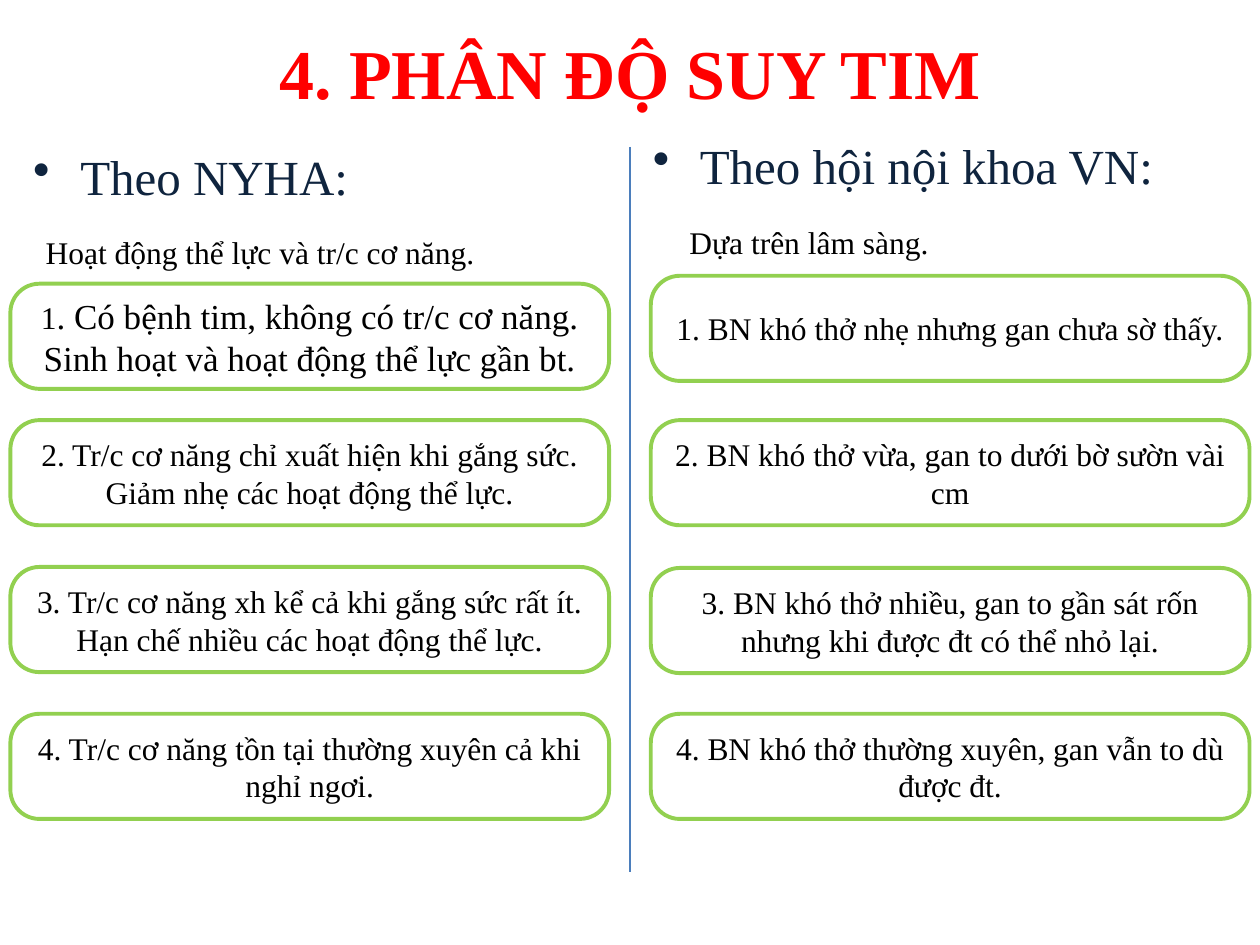
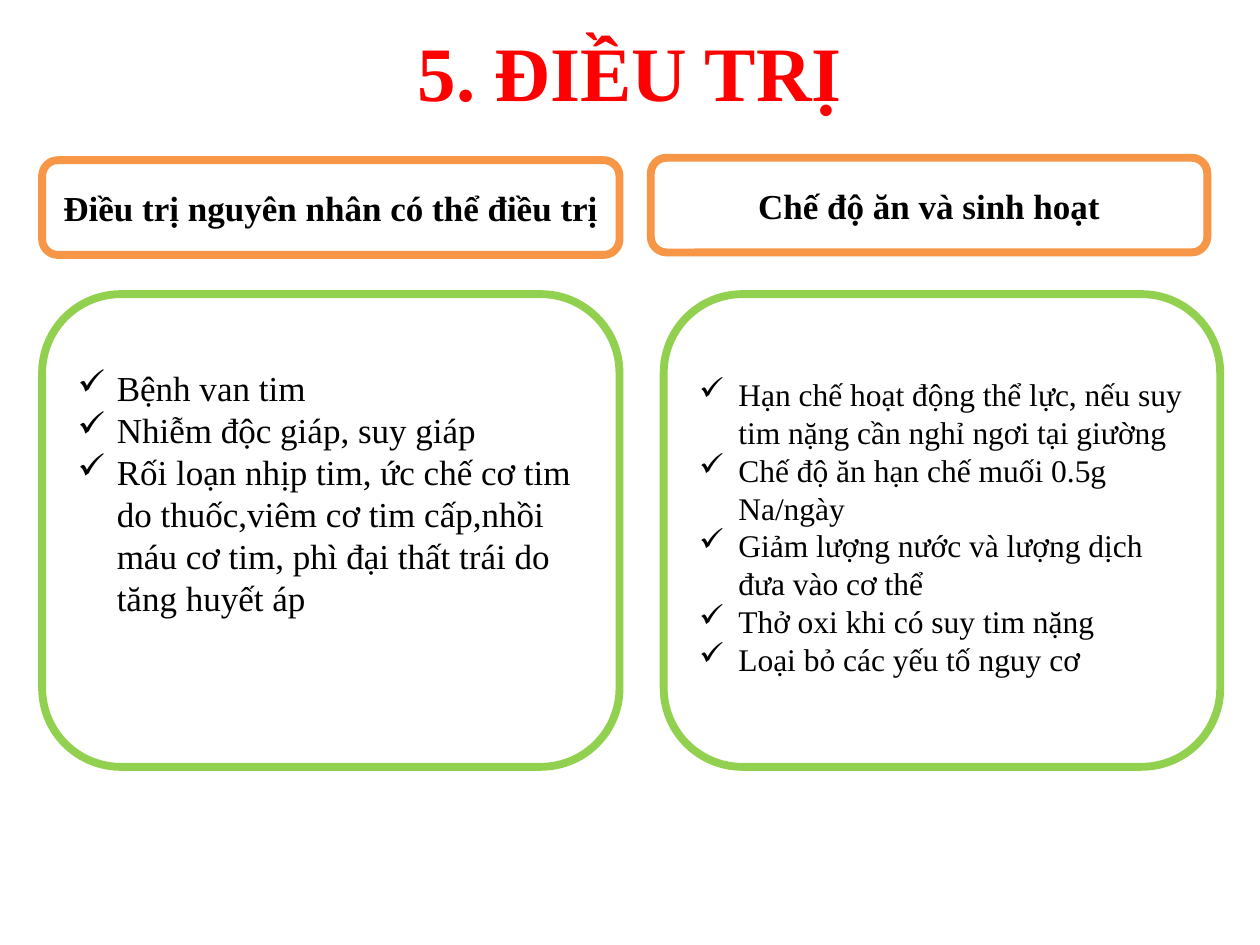
from dataclasses import dataclass

from lxml.etree import SubElement
from pptx import Presentation
from pptx.dml.color import RGBColor
from pptx.enum.shapes import MSO_CONNECTOR, MSO_SHAPE
from pptx.enum.text import MSO_ANCHOR, PP_ALIGN
from pptx.oxml.ns import qn
from pptx.util import Cm, Pt

FONT = "Times New Roman"
RED = RGBColor(0xFF, 0x00, 0x00)
NAVY = RGBColor(0x0F, 0x24, 0x3E)
BLACK = RGBColor(0x00, 0x00, 0x00)
GREEN = RGBColor(0x92, 0xD0, 0x50)
ORANGE = RGBColor(0xF7, 0x96, 0x46)
BLUE = RGBColor(0x4B, 0x7E, 0xBC)

GRADE_WIDTH, GRADE_HEIGHT, GRADE_ROUNDING = 12.07, 2.12, 0.276
INTRO_WIDTH, INTRO_HEIGHT = 11.22, 14.48
HEADER_HEIGHT = 1.91
PANEL_TOP, PANEL_HEIGHT = 5.93, 9.53


@dataclass(frozen=True)
class Grade:
    top: float
    text: str
    number: str = ""


@dataclass(frozen=True)
class Classification:
    intro_left: float
    intro_top: float
    heading: str
    basis: str
    basis_indent: float
    grades_left: float
    grades: tuple[Grade, ...]


@dataclass(frozen=True)
class Treatment:
    header_left: float
    header_top: float
    panel_left: float
    width: float
    heading: str
    items: tuple[str, ...]
    size: int
    top_margin: float


CLASSIFICATIONS = (
    Classification(
        0.42, 2.75, "Theo NYHA:", "Hoạt động thể lực và tr/c cơ năng.", 0.25, 0.21,
        (
            Grade(5.72, ". Có bệnh tim, không có tr/c cơ năng. "
                        "Sinh hoạt và hoạt động thể lực gần bt.", "1"),
            Grade(8.47, "2. Tr/c cơ năng chỉ xuất hiện khi gắng sức. "
                        "Giảm nhẹ các hoạt động thể lực."),
            Grade(11.43, "3. Tr/c cơ năng xh kể cả khi gắng sức rất ít. "
                         "Hạn chế nhiều các hoạt động thể lực."),
            Grade(14.39, "4. Tr/c cơ năng tồn tại thường xuyên cả khi nghỉ ngơi."),
        ),
    ),
    Classification(
        12.91, 2.54, "Theo hội nội khoa VN:", "Dựa trên lâm sàng.", 0.74, 13.12,
        (
            Grade(5.56, "1. BN khó thở nhẹ nhưng gan chưa sờ thấy."),
            Grade(8.47, "2. BN khó thở vừa, gan to dưới bờ sườn vài cm"),
            Grade(11.45, "3. BN khó thở nhiều, gan to gần sát rốn "
                         "nhưng khi được đt có thể nhỏ lại."),
            Grade(14.39, "4. BN khó thở thường xuyên, gan vẫn to dù được đt."),
        ),
    ),
)

TREATMENTS = (
    Treatment(
        0.85, 3.23, 0.85, 11.64, "Điều trị nguyên nhân có thể điều trị",
        (
            "Bệnh van tim",
            "Nhiễm độc giáp, suy giáp",
            "Rối loạn nhịp tim, ức chế cơ tim do thuốc,viêm cơ tim cấp,"
            "nhồi máu cơ tim, phì đại thất trái do tăng huyết áp",
        ),
        20, 1.0,
    ),
    Treatment(
        13.12, 3.18, 13.38, 11.22, "Chế độ ăn và sinh hoạt",
        (
            "Hạn chế hoạt động thể lực, nếu suy tim nặng cần nghỉ ngơi tại giường",
            "Chế độ ăn hạn chế muối 0.5g Na/ngày",
            "Giảm lượng nước và lượng dịch đưa vào cơ thể",
            "Thở oxi khi có suy tim nặng",
            "Loại bỏ các yếu tố nguy cơ",
        ),
        18, 1.17,
    ),
)


def style(para, size: int, color: RGBColor = BLACK, bold: bool = False) -> None:
    para.font.name = FONT
    para.font.size = Pt(size)
    para.font.color.rgb = color
    para.font.bold = bold


def indent(para, left: float, first: float = 0) -> None:
    properties = para._p.get_or_add_pPr()
    properties.set("marL", str(Cm(left)))
    properties.set("indent", str(Cm(first)))


def add_bullet(para, symbol: str, hang: float) -> None:
    indent(para, hang, -hang)
    SubElement(para._p.get_or_add_pPr(), qn("a:buChar")).set("char", symbol)


def add_titled_page(deck, title: str, size: int):
    page = deck.slides.add_slide(deck.slide_layouts[5])
    box = page.shapes.title
    box.left, box.top, box.width, box.height = Cm(1.27), Cm(0.76), Cm(22.86), Cm(1.35)
    box.text_frame.vertical_anchor = MSO_ANCHOR.MIDDLE
    para = box.text_frame.paragraphs[0]
    para.text = title
    para.alignment = PP_ALIGN.CENTER
    style(para, size, RED, True)
    return page


def add_rounded_box(page, left: float, top: float, width: float, height: float,
                    color: RGBColor, weight: float):
    box = page.shapes.add_shape(
        MSO_SHAPE.ROUNDED_RECTANGLE, Cm(left), Cm(top), Cm(width), Cm(height))
    box.shadow.inherit = False
    box.fill.background()
    box.line.color.rgb = color
    box.line.width = Pt(weight)
    box.text_frame.word_wrap = True
    box.text_frame.vertical_anchor = MSO_ANCHOR.MIDDLE
    box.text_frame.paragraphs[0].alignment = PP_ALIGN.CENTER
    return box


def add_grade(page, left: float, grade: Grade) -> None:
    box = add_rounded_box(page, left, grade.top, GRADE_WIDTH, GRADE_HEIGHT, GREEN, 2.25)
    box.adjustments[0] = GRADE_ROUNDING
    para = box.text_frame.paragraphs[0]
    style(para, 18)
    if grade.number:
        para.add_run().text = grade.number
    span = para.add_run()
    span.text = grade.text
    if grade.number:
        span.font.size = Pt(20)


def add_classification(page, column: Classification) -> None:
    box = page.shapes.add_textbox(
        Cm(column.intro_left), Cm(column.intro_top), Cm(INTRO_WIDTH), Cm(INTRO_HEIGHT))
    frame = box.text_frame
    frame.word_wrap = True
    frame.margin_top = Cm(0.2)
    heading = frame.paragraphs[0]
    heading.text = column.heading
    style(heading, 28, NAVY)
    add_bullet(heading, "•", 0.95)
    basis = frame.add_paragraph()
    basis.text = column.basis
    basis.space_before = Pt(16)
    style(basis, 18)
    indent(basis, column.basis_indent)
    for grade in column.grades:
        add_grade(page, column.grades_left, grade)


def add_divider(page) -> None:
    divider = page.shapes.add_connector(
        MSO_CONNECTOR.STRAIGHT, Cm(12.7), Cm(2.96), Cm(12.7), Cm(17.57))
    divider.line.color.rgb = BLUE
    divider.line.width = Pt(0.75)
    SubElement(divider._element.spPr, qn("a:effectLst"))


def add_treatment(page, column: Treatment) -> None:
    header = add_rounded_box(
        page, column.header_left, column.header_top, column.width, HEADER_HEIGHT, ORANGE, 4.5)
    heading = header.text_frame.paragraphs[0]
    heading.text = column.heading
    style(heading, 20, bold=True)
    panel = add_rounded_box(
        page, column.panel_left, PANEL_TOP, column.width, PANEL_HEIGHT, GREEN, 4.5)
    frame = panel.text_frame
    frame.vertical_anchor = MSO_ANCHOR.TOP
    frame.margin_top = Cm(column.top_margin)
    for index, item in enumerate(column.items):
        para = frame.add_paragraph() if index else frame.paragraphs[0]
        para.text = item
        para.alignment = PP_ALIGN.LEFT
        style(para, column.size)
        add_bullet(para, "✓", 0.79)


def main() -> None:
    deck = Presentation()
    deck.slide_width, deck.slide_height = Cm(25.4), Cm(19.05)

    grading_page = add_titled_page(deck, "4. PHÂN ĐỘ SUY TIM", 40)
    for classification in CLASSIFICATIONS:
        add_classification(grading_page, classification)
    add_divider(grading_page)

    treatment_page = add_titled_page(deck, "5. ĐIỀU TRỊ", 44)
    for treatment in TREATMENTS:
        add_treatment(treatment_page, treatment)

    deck.save("out.pptx")


if __name__ == "__main__":
    main()
